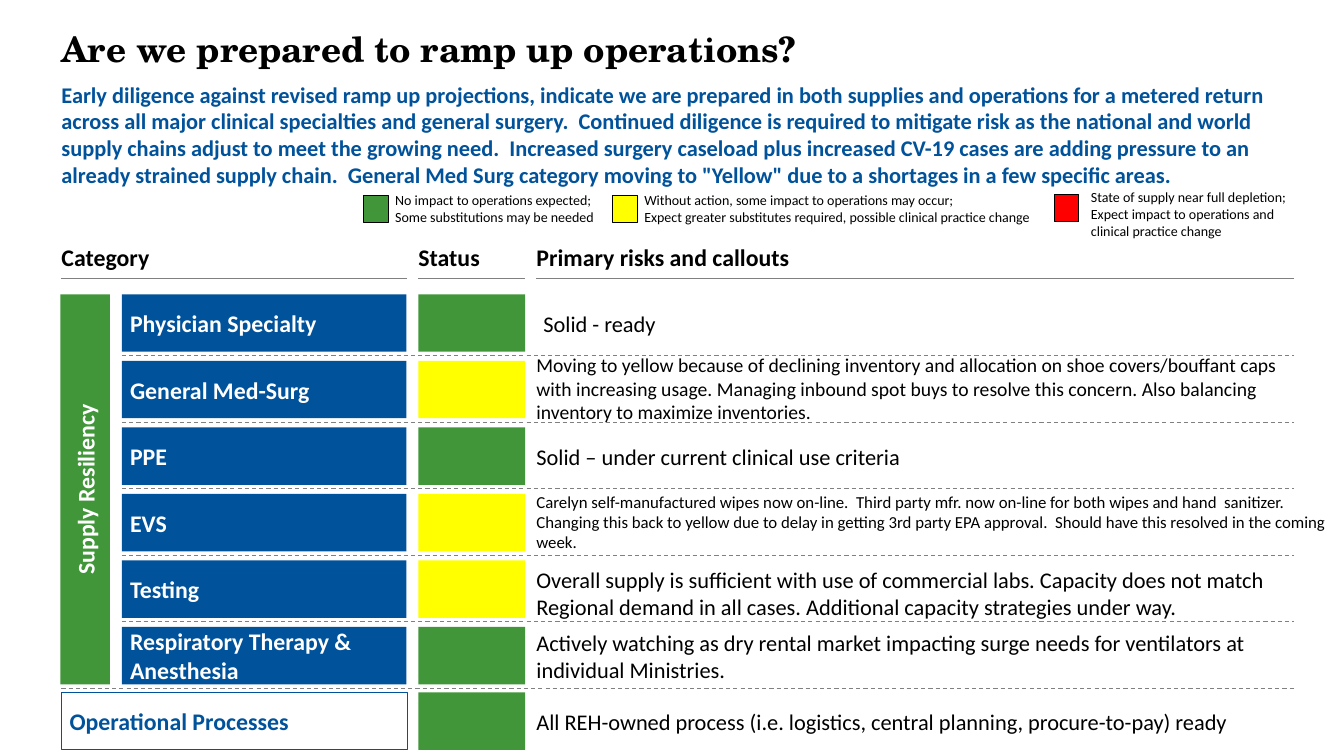
"""Builds the supply readiness status slide."""
from dataclasses import dataclass
from typing import Optional

from lxml import etree
from pptx import Presentation
from pptx import util as u
from pptx.dml.color import RGBColor
from pptx.enum import dml, shapes, text
from pptx.oxml import ns


@dataclass(frozen=True)
class Theme:
    black: str = "000000"
    white: str = "FFFFFF"
    blue: str = "00529B"
    green: str = "419639"
    yellow: str = "FFFF00"
    red: str = "FF0000"
    rule: str = "808080"
    body_font: str = "Calibri"
    title_font: str = "TeX Gyre Schola"
    title_size: int = 25
    label_size: int = 17
    body_size: int = 16
    dense_size: int = 14
    small_size: int = 12
    legend_size: int = 10
    line_width: float = 0.75


@dataclass(frozen=True)
class Box:
    left: float
    top: float
    width: float
    height: float


@dataclass(frozen=True)
class LegendEntry:
    swatch: Box
    color: str
    caption: Box
    lines: tuple[str, ...]


@dataclass(frozen=True)
class Column:
    heading: str
    left: float
    width: float


@dataclass(frozen=True)
class SupplyRow:
    category: str
    color: str
    callout: str
    size: int = Theme.body_size
    left: float = 5.32
    width: float = 7.51
    shift: float = 0


THEME = Theme()
MIDDLE = text.MSO_ANCHOR.MIDDLE
LEFT, RIGHT = 0.61, 12.83
CATEGORY_LEFT, CATEGORY_WIDTH = 1.21, 2.82
FIRST_ROW, PITCH, ROW_HEIGHT = 2.92, 0.66, 0.57
TITLE = "Are we prepared to ramp up operations?"
SUMMARY = (
    "Early diligence against revised ramp up projections, indicate we are prepared in both "
    "supplies and operations for a metered return across all major clinical specialties and "
    "general surgery.  Continued diligence is required to mitigate risk as the national and "
    "world supply chains adjust to meet the growing need.  Increased surgery caseload plus "
    "increased CV-19 cases are adding pressure to an already strained supply chain.  General "
    'Med Surg category moving to "Yellow" due to a shortages in a few specific areas.'
)
LEGEND = (
    LegendEntry(Box(3.61, 1.94, 0.24, 0.27), THEME.green, Box(3.92, 1.92, 2.06, 0.3),
                ("No impact to operations expected;", "Some substitutions may be needed")),
    LegendEntry(Box(6.08, 1.94, 0.24, 0.27), THEME.yellow, Box(6.39, 1.92, 3.97, 0.3),
                ("Without action, some impact to operations may occur;",
                 "Expect greater substitutes required, possible clinical practice change")),
    LegendEntry(Box(10.46, 1.93, 0.24, 0.27), THEME.red, Box(10.82, 1.8, 2.01, 0.65),
                ("State of supply near full depletion;", "Expect impact to operations and",
                 "clinical practice change")),
)
CATEGORY = Column("Category", LEFT, 3.43)
STATUS = Column("Status", 4.15, 1.06)
RISKS = Column("Primary risks and callouts", 5.32, 7.51)
ROWS = (
    SupplyRow("Physician Specialty", THEME.green, "Solid - ready", left=5.39),
    SupplyRow("General Med-Surg", THEME.yellow,
              "Moving to yellow because of declining inventory and allocation on shoe "
              "covers/bouffant caps with increasing usage. Managing inbound spot buys to resolve "
              "this concern. Also balancing inventory to maximize inventories.",
              size=THEME.dense_size, width=7.5, shift=-0.01),
    SupplyRow("PPE", THEME.green, "Solid – under current clinical use criteria"),
    SupplyRow("EVS", THEME.yellow,
              "Carelyn self-manufactured wipes now on-line.  Third party mfr. now on-line for "
              "both wipes and hand  sanitizer.  Changing this back to yellow due to delay in "
              "getting 3rd party EPA approval.  Should have this resolved in the coming week.",
              size=THEME.small_size, width=7.89, shift=-0.01),
    SupplyRow("Testing", THEME.yellow,
              "Overall supply is sufficient with use of commercial labs. Capacity does not match "
              "Regional demand in all cases. Additional capacity strategies under way.",
              shift=0.04),
    SupplyRow("Respiratory Therapy & Anesthesia", THEME.green,
              "Actively watching as dry rental market impacting surge needs for ventilators at "
              "individual Ministries.", width=7.75),
)
OPERATIONS = SupplyRow(
    "Operational Processes", THEME.green,
    "All REH-owned process (i.e. logistics, central planning, procure-to-pay) ready")


def inches(box: Box) -> tuple:
    return tuple(u.Inches(n) for n in (box.left, box.top, box.width, box.height))


def write(holder, *lines: str, size: float = THEME.body_size, color: str = THEME.black,
          bold: bool = False, font: str = THEME.body_font, inset: float = 0,
          anchor=MIDDLE, align=text.PP_ALIGN.LEFT) -> None:
    frame = holder.text_frame
    frame.word_wrap = True
    frame.auto_size = text.MSO_AUTO_SIZE.NONE
    frame.vertical_anchor = anchor
    frame.margin_left = frame.margin_right = u.Inches(inset)
    frame.margin_top = frame.margin_bottom = u.Inches(inset)
    frame.text = "\n".join(lines)
    for paragraph in frame.paragraphs:
        paragraph.alignment = align
        paragraph.font.size = u.Pt(size)
        paragraph.font.name = font
        paragraph.font.bold = bold
        paragraph.font.color.rgb = RGBColor.from_string(color)


def add_text(slide, box: Box, *lines: str, **style) -> None:
    write(slide.shapes.add_textbox(*inches(box)), *lines, **style)


def add_block(slide, box: Box, fill: str, outline: Optional[str] = None):
    block = slide.shapes.add_shape(shapes.MSO_SHAPE.RECTANGLE, *inches(box))
    block.shadow.inherit = False
    block.fill.solid()
    block.fill.fore_color.rgb = RGBColor.from_string(fill)
    if outline:
        block.line.color.rgb = RGBColor.from_string(outline)
        block.line.width = u.Pt(THEME.line_width)
    else:
        block.line.fill.background()
    return block


def add_rule(slide, left: float, right: float, top: float, dashed: bool = False) -> None:
    rule = slide.shapes.add_connector(
        shapes.MSO_CONNECTOR.STRAIGHT, u.Inches(left), u.Inches(top), u.Inches(right), u.Inches(top))
    rule.line.color.rgb = RGBColor.from_string(THEME.rule)
    rule.line.width = u.Pt(THEME.line_width)
    if dashed:
        rule.line.dash_style = dml.MSO_LINE.DASH
    etree.SubElement(rule._element.spPr, ns.qn("a:effectLst"))


def add_row(slide, row: SupplyRow, category: Box, fill: str, ink: str,
            outline: Optional[str] = None) -> None:
    write(add_block(slide, category, fill, outline), row.category,
          size=THEME.label_size, color=ink, bold=True, inset=0.08)
    add_block(slide, Box(STATUS.left, category.top, STATUS.width, ROW_HEIGHT), row.color)
    add_text(slide, Box(row.left, category.top + row.shift, row.width, ROW_HEIGHT),
             row.callout, size=row.size)


def main() -> None:
    deck = Presentation()
    deck.slide_width, deck.slide_height = u.Inches(13.33), u.Inches(7.5)
    slide = deck.slides.add_slide(deck.slide_layouts[5])

    title = slide.shapes.title
    title.left, title.top, title.width, title.height = inches(Box(LEFT, 0.27, 12.12, 0.42))
    write(title, TITLE, size=THEME.title_size, bold=True, font=THEME.title_font)
    add_text(slide, Box(LEFT, 0.8, 12.3, 1.08), SUMMARY, color=THEME.blue, bold=True,
             anchor=text.MSO_ANCHOR.TOP)

    for entry in LEGEND:
        add_block(slide, entry.swatch, entry.color, THEME.black)
        add_text(slide, entry.caption, *entry.lines, size=THEME.legend_size)

    for column in (CATEGORY, STATUS, RISKS):
        add_text(slide, Box(column.left, 2.45, column.width, 0.24), column.heading,
                 size=THEME.label_size, bold=True, anchor=text.MSO_ANCHOR.BOTTOM)
        add_rule(slide, column.left, column.left + column.width, 2.76)

    resiliency = add_block(slide, Box(-1.09, 4.61, 3.87, 0.49), THEME.green)
    resiliency.rotation = 270
    write(resiliency, "Supply Resiliency", size=THEME.label_size, color=THEME.white,
          bold=True, inset=0.08, align=text.PP_ALIGN.CENTER)

    for index, row in enumerate(ROWS):
        top = FIRST_ROW + index * PITCH
        add_row(slide, row, Box(CATEGORY_LEFT, top, CATEGORY_WIDTH, ROW_HEIGHT),
                THEME.blue, THEME.white)
        rule_left = LEFT if row is ROWS[-1] else CATEGORY_LEFT
        add_rule(slide, rule_left, RIGHT, top + 0.61, dashed=True)

    add_row(slide, OPERATIONS, Box(LEFT, 6.87, CATEGORY.width, ROW_HEIGHT),
            THEME.white, THEME.blue, THEME.blue)
    deck.save("out.pptx")


if __name__ == "__main__":
    main()
